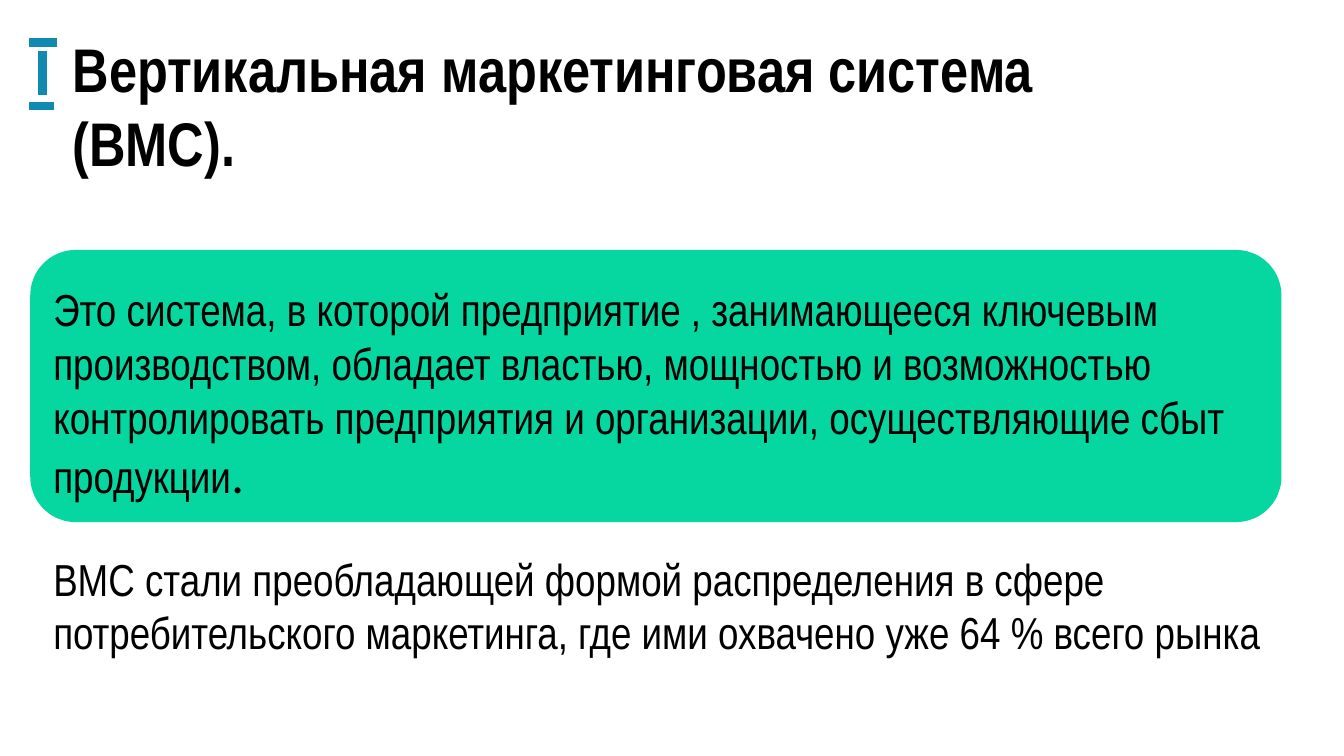
"""Builds a slide that defines the vertical marketing system."""
import pptx
import pptx.util
import pptx.dml.color
import pptx.enum.shapes
import pptx.enum.text
import pptx.oxml.ns
from lxml import etree

WIDTH, HEIGHT = 13.33, 7.5
COLORS = {"text": "000000", "panel": "06D6A0", "mark": "118AB2"}
FONT = "Arial Narrow"

TITLE = "Вертикальная маркетинговая система (ВМС)."
DEFINITION = (
    "Это система, в которой предприятие , занимающееся ключевым "
    "производством, обладает властью, мощностью и возможностью "
    "контролировать предприятия и организации, осуществляющие сбыт продукции"
)
FULL_STOP = {"text": ".", "font": "Calibri", "size": 36}
SHARE = (
    "ВМС стали преобладающей формой распределения в сфере "
    "потребительского маркетинга, где ими охвачено уже 64 % всего рынка"
)

TITLE_BOX = (0.62, 0.26, 10.75, 1.58)
PANEL_BOX = (0.3, 2.48, 12.41, 2.7)
DEFINITION_BOX = (0.43, 2.75, 12.51, 2.3)
SHARE_BOX = (0.43, 5.42, 12.79, 1.18)
MARK_LINES = [
    (0.42, 0.51, 0.42, 0.94),
    (0.57, 0.42, 0.29, 0.42),
    (0.54, 1.05, 0.29, 1.05),
]


def inches(values):
    return [pptx.util.Inches(value) for value in values]


def color(name):
    return pptx.dml.color.RGBColor.from_string(COLORS[name])


def write(shape, text, size, bold=False):
    frame = shape.text_frame
    frame.word_wrap = True
    frame.auto_size = pptx.enum.text.MSO_AUTO_SIZE.NONE
    frame.vertical_anchor = pptx.enum.text.MSO_ANCHOR.TOP
    paragraph = frame.paragraphs[0]
    paragraph.alignment = pptx.enum.text.PP_ALIGN.LEFT
    paragraph.add_run().text = text
    paragraph.font.name = FONT
    paragraph.font.size = pptx.util.Pt(size)
    paragraph.font.bold = bold
    paragraph.font.color.rgb = color("text")
    return paragraph


def add_panel(slide):
    panel = slide.shapes.add_shape(
        pptx.enum.shapes.MSO_SHAPE.ROUNDED_RECTANGLE, *inches(PANEL_BOX))
    panel.shadow.inherit = False
    panel.fill.solid()
    panel.fill.fore_color.rgb = color("panel")
    panel.line.fill.background()


def add_mark(slide):
    group = slide.shapes.add_group_shape()
    for ends in MARK_LINES:
        line = group.shapes.add_connector(
            pptx.enum.shapes.MSO_CONNECTOR.STRAIGHT, *inches(ends))
        line.line.color.rgb = color("mark")
        line.line.width = pptx.util.Pt(6)
        etree.SubElement(line._element.spPr, pptx.oxml.ns.qn("a:effectLst"))


def main():
    presentation = pptx.Presentation()
    presentation.slide_width, presentation.slide_height = inches((WIDTH, HEIGHT))
    slide = presentation.slides.add_slide(presentation.slide_layouts.get_by_name("Title Only"))

    title = slide.shapes.title
    title.left, title.top, title.width, title.height = inches(TITLE_BOX)
    write(title, TITLE, 44, bold=True)

    add_panel(slide)
    definition = write(slide.shapes.add_textbox(*inches(DEFINITION_BOX)), DEFINITION, 32)
    full_stop = definition.add_run()
    full_stop.text = FULL_STOP["text"]
    full_stop.font.name = FULL_STOP["font"]
    full_stop.font.size = pptx.util.Pt(FULL_STOP["size"])
    write(slide.shapes.add_textbox(*inches(SHARE_BOX)), SHARE, 32)
    add_mark(slide)

    presentation.save("out.pptx")


if __name__ == "__main__":
    main()
